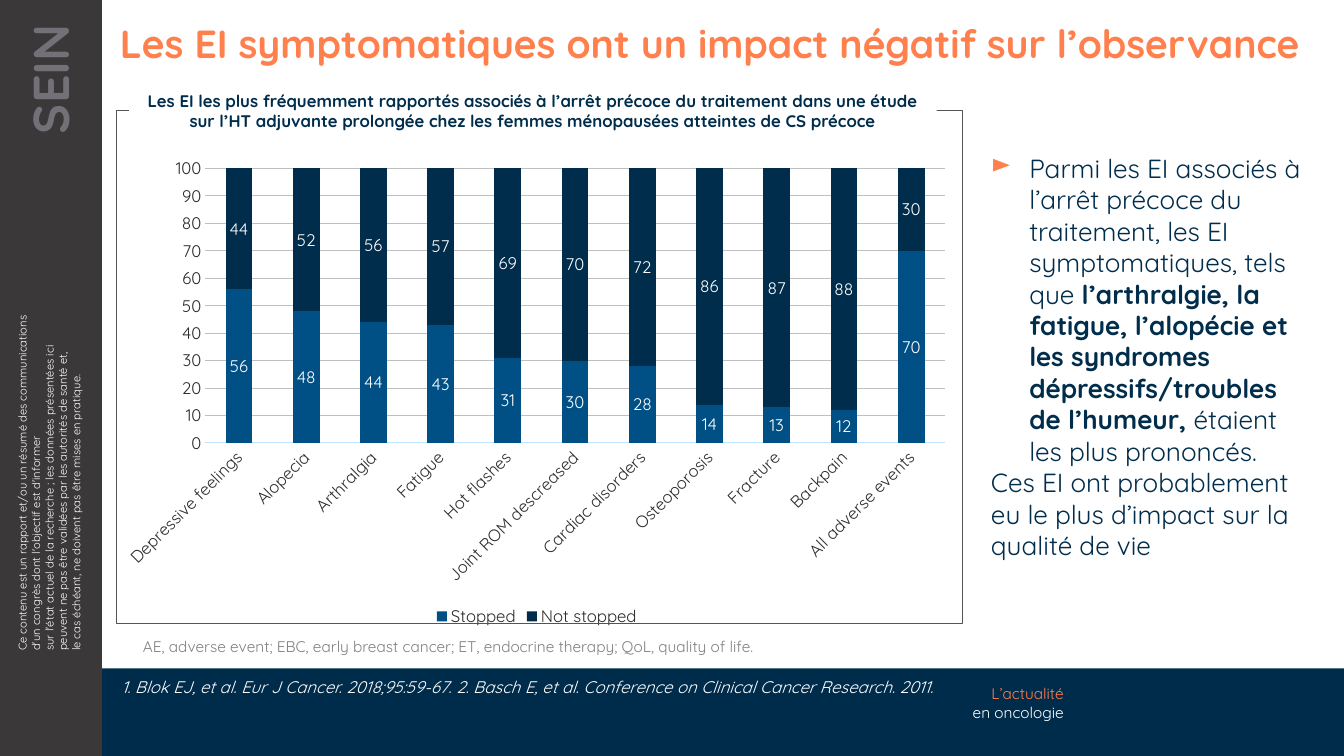
from lxml import etree
from pptx import Presentation
from pptx.chart.data import CategoryChartData
from pptx.dml.color import RGBColor
from pptx.enum.chart import XL_CHART_TYPE, XL_LABEL_POSITION, XL_LEGEND_POSITION, XL_TICK_MARK
from pptx.enum.shapes import MSO_SHAPE
from pptx.enum.text import PP_ALIGN
from pptx.oxml import parse_xml
from pptx.oxml.ns import nsdecls, qn
from pptx.util import Inches, Pt

RECT = MSO_SHAPE.RECTANGLE
LEFT, CENTER, RIGHT = PP_ALIGN.LEFT, PP_ALIGN.CENTER, PP_ALIGN.RIGHT
NO_TICK = XL_TICK_MARK.NONE
FONT = "Quicksand"
COLORS = {"navy": "002D4C", "footer": "002C4C", "side": "3A3839", "orange": "FF7F4D",
          "white": "FFFFFF", "tab": "737078", "note": "808080", "frame": "565357",
          "ink": "2B2A2C", "blue": "005086", "grid": "BFBFBF", "axis": "BEE4FF"}

# Each run: text, size, colour, further font values
DISCLAIMER = [("Ce contenu est un rapport et/ou un résumé des communications d'un congrès dont "
               "l'objectif est d'informer \nsur l'état actuel de la recherche ; les données "
               "présentées ici peuvent ne pas être validées par les autorités de santé et, \n"
               "le cas échéant, ne doivent pas être mises en pratique.", 8, "white", {})]
SECTION = [("SEIN", 36, "tab", {"bold": True})]
SERIES_NAME = [("L’actualité\n", 11, "orange", {}), ("en oncologie", 11, "white", {})]
REFERENCES = [("1. Blok EJ, et al. Eur J Cancer. 2018;95:59-67. 2. Basch E, et al. Conference on "
               "Clinical Cancer Research. 2011.", 12, "white", {"italic": True})]
TITLE = [("Les EI symptomatiques ont un impact négatif sur l’observance",
          28, "orange", {"bold": True})]
FINDING = [
    ("Parmi les EI associés à l’arrêt précoce du traitement, les EI symptomatiques, tels que ",
     18.7, "navy", {}),
    ("l’arthralgie, la fatigue, l’alopécie et les syndromes dépressifs/troubles de l’humeur,",
     18.7, "navy", {"bold": True}),
    (" étaient les plus prononcés.", 18.7, "navy", {})]
CONCLUSION = [("Ces EI ont probablement eu le plus d’impact sur la qualité de vie",
               18.7, "navy", {})]
ABBREVIATIONS = [("AE, adverse event; EBC, early breast cancer; ET, endocrine therapy; "
                  "QoL, quality of life.", 11, "note", {})]
CHART_TITLE = [("Les EI les plus fréquemment rapportés associés à l’arrêt précoce du traitement "
                "dans une étude sur l’HT adjuvante prolongée chez les femmes ménopausées "
                "atteintes de CS précoce", 12, "navy", {"bold": True})]
STOPPED = {"Depressive feelings": 56, "Alopecia": 48, "Arthralgia": 44, "Fatigue": 43,
           "Hot flashes": 31, "Joint ROM descreased": 30, "Cardiac disorders": 28,
           "Osteoporosis": 14, "Fracture": 13, "Backpain": 12, "All adverse events": 70}
SERIES = [("Stopped", list(STOPPED.values()), "blue"),
          ("Not stopped", [100 - v for v in STOPPED.values()], "navy")]
PLOT_AREA = {"x": 0.11, "y": 0.04, "w": 0.87, "h": 0.57}


def rgb(name):
    return RGBColor.from_string(COLORS[name])


def style_font(font, size, color, **values):
    for key, value in {"name": FONT, "size": Pt(size), **values}.items():
        setattr(font, key, value)
    font.color.rgb = rgb(color)


def write(tf, paragraphs, align=LEFT, **values):
    tf.word_wrap = True
    for i, runs in enumerate(paragraphs):
        p = tf.paragraphs[0] if i == 0 else tf.add_paragraph()
        p.alignment = align
        for key, value in values.items():
            setattr(p, key, value)
        for text, size, color, extra in runs:
            for j, line in enumerate(text.split("\n")):
                if j:
                    p.add_line_break()
                if line:
                    r = p.add_run()
                    r.text = line
                    style_font(r.font, size, color, **extra)


def add_text(s, box, paragraphs, rotation=0, margins=None, **values):
    sp = s.shapes.add_textbox(*map(Inches, box))
    sp.rotation = rotation
    for side, size in (margins or {}).items():
        setattr(sp.text_frame, f"margin_{side}", Inches(size))
    write(sp.text_frame, paragraphs, **values)
    return sp.text_frame


def add_rect(s, box, fill=None, line=None):
    sp = s.shapes.add_shape(RECT, *map(Inches, box))
    sp.shadow.inherit = False
    if fill:
        sp.fill.solid()
        sp.fill.fore_color.rgb = rgb(fill)
    else:
        sp.fill.background()
    if line:
        sp.line.color.rgb = rgb(line)
        sp.line.width = Pt(0.25)
    else:
        sp.line.fill.background()
    return sp


def add_bullet(p, char, color, indent):
    pPr = p._p.get_or_add_pPr()
    pPr.set("marL", str(Inches(indent)))
    pPr.set("indent", str(-Inches(indent)))
    clr = etree.SubElement(pPr, qn("a:buClr"))
    etree.SubElement(clr, qn("a:srgbClr")).set("val", COLORS[color])
    etree.SubElement(pPr, qn("a:buChar")).set("char", char)


def add_events_chart(s, box):
    data = CategoryChartData()
    data.categories = list(STOPPED)
    for name, values, _ in SERIES:
        data.add_series(name, values)
    chart = s.shapes.add_chart(XL_CHART_TYPE.COLUMN_STACKED, *map(Inches, box), data).chart
    chart.has_title = False
    style_font(chart.font, 10, "ink")
    chart.has_legend = True
    chart.legend.position = XL_LEGEND_POSITION.BOTTOM
    chart.legend.include_in_layout = False
    style_font(chart.legend.font, 12, "ink")

    cat, val = chart.category_axis, chart.value_axis
    for axis in (cat, val):
        axis.major_tick_mark = axis.minor_tick_mark = NO_TICK
        style_font(axis.tick_labels.font, 12, "ink")
    cat.format.line.color.rgb = rgb("axis")
    cat.format.line.width = Pt(0.75)
    cat._element.find(qn("c:txPr")).find(qn("a:bodyPr")).set("rot", "-2700000")
    val.minimum_scale, val.maximum_scale, val.major_unit = 0, 100, 10
    val.format.line.fill.background()
    grid = val.major_gridlines.format.line
    grid.color.rgb = rgb("grid")
    grid.width = Pt(0.75)

    plot = chart.plots[0]
    plot.gap_width, plot.overlap, plot.vary_by_categories = 150, 100, False
    for series, (_, _, color) in zip(plot.series, SERIES):
        series.format.fill.solid()
        series.format.fill.fore_color.rgb = rgb(color)
        labels = series.data_labels
        labels.show_value = True
        labels.position = XL_LABEL_POSITION.CENTER
        style_font(labels.font, 12, "white")

    sizes = "".join(f'<c:{k} val="{v}"/>' for k, v in PLOT_AREA.items())
    layout = parse_xml(f'<c:layout {nsdecls("c")}><c:manualLayout><c:layoutTarget val="inner"/>'
                       f'<c:xMode val="edge"/><c:yMode val="edge"/>{sizes}'
                       '</c:manualLayout></c:layout>')
    area = chart._chartSpace.chart.plotArea
    for old in area.findall(qn("c:layout")):
        area.remove(old)
    area.insert(0, layout)


def main():
    prs = Presentation()
    prs.slide_width, prs.slide_height = Inches(13.33), Inches(7.5)
    s = prs.slides.add_slide(prs.slide_layouts[6])

    add_rect(s, (1.01, 6.63, 12.32, 0.87), "footer")
    add_rect(s, (0, 0, 1.01, 7.5), "side")
    add_text(s, (-1.31, 4.37, 3.6, 0.77), [DISCLAIMER], rotation=270)
    add_text(s, (-1.04, 1.18, 3.07, 0.71), [SECTION], rotation=270,
             margins={"right": 0.24}, align=RIGHT)
    add_text(s, (9.01, 6.74, 1.64, 0.47), [SERIES_NAME], align=RIGHT)
    add_text(s, (1.11, 6.69, 8.43, 0.51), [REFERENCES], line_spacing=0.9)
    add_text(s, (0.99, 0.2, 12.83, 0.57), [TITLE], margins={"left": 0.2}, line_spacing=0.9)

    tf = add_text(s, (9.73, 1.46, 3.35, 4.19), [FINDING, CONCLUSION])
    add_bullet(tf.paragraphs[0], "►", "orange", 0.38)
    add_text(s, (1.32, 6.27, 7.14, 0.29), [ABBREVIATIONS])

    add_events_chart(s, (1.11, 1.48, 8.43, 4.78))
    add_rect(s, (1.15, 1.09, 8.39, 5.09), line="frame")
    caption = add_rect(s, (1.28, 0.85, 8.01, 0.5), "white")
    write(caption.text_frame, [CHART_TITLE], align=CENTER)

    prs.save("out.pptx")


if __name__ == "__main__":
    main()
